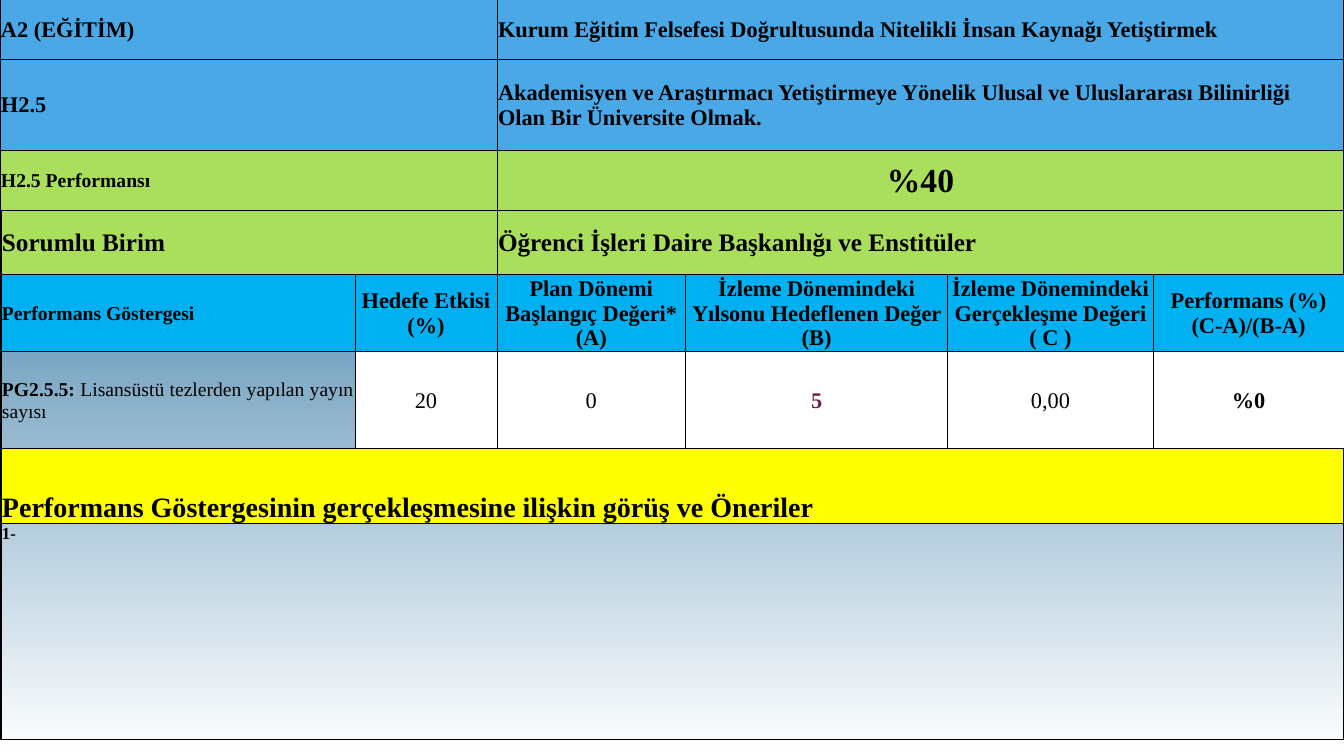
from dataclasses import dataclass

from lxml import etree
from pptx import Presentation
from pptx import util as u
from pptx.dml.color import RGBColor
from pptx.enum import text
from pptx.oxml import ns

PX = 9144  # EMU in one px, 100 px to the inch
FONT = "Times New Roman"
BLACK, WHITE = "000000", "FFFFFF"
BLUE, GREEN, CYAN, YELLOW = "4AA8E7", "AADF5E", "00B0F0", "FFFF00"
PLUM = "701E46"
PLAIN_STYLE = "{2D5ABB26-0587-4C30-8999-92F81FD0307C}"
LEFT, CENTER, JUSTIFY = text.PP_ALIGN.LEFT, text.PP_ALIGN.CENTER, text.PP_ALIGN.JUSTIFY
MIDDLE, TOP, BOTTOM = text.MSO_ANCHOR.MIDDLE, text.MSO_ANCHOR.TOP, text.MSO_ANCHOR.BOTTOM
THIN, THICK = 0.5, 1


@dataclass
class Entry:
    words: str
    size: int = 16
    fill: str = ""
    align: int = LEFT
    span: int = 1
    anchor: int = MIDDLE
    bold: bool = True
    color: str = BLACK
    tail: str = ""  # regular text after the bold start
    open_sides: str = ""  # sides without a border


def px(length):
    return u.Emu(length * PX)


def rgb(code):
    return RGBColor.from_string(code)


def paint_background(page):
    fill = page.background.fill
    fill.gradient()
    fill.gradient_angle = 90
    for stop, color in zip(fill.gradient_stops, (WHITE, "06588E")):
        stop.color.rgb = rgb(color)


def add_border(cell, side, points):
    props = cell._tc.get_or_add_tcPr()
    line = etree.SubElement(props, ns.qn(f"a:ln{side}"), w=str(u.Pt(points)))
    fill = etree.SubElement(line, ns.qn("a:solidFill"))
    etree.SubElement(fill, ns.qn("a:srgbClr"), val=BLACK)


def add_span(para, words, entry, bold):
    span = para.add_run()
    span.text = words
    span.font.name = FONT
    span.font.size = u.Pt(entry.size)
    span.font.bold = bold
    span.font.color.rgb = rgb(entry.color)


def fill_cell(cell, entry, borders):
    for side, points in borders.items():
        if side not in entry.open_sides:
            add_border(cell, side, points)
    if entry.fill:
        cell.fill.solid()
        cell.fill.fore_color.rgb = rgb(entry.fill)
    else:
        cell.fill.background()
    cell.margin_left = cell.margin_right = cell.margin_top = px(1)
    cell.margin_bottom = 0
    cell.vertical_anchor = entry.anchor
    para = cell.text_frame.paragraphs[0]
    para.alignment = entry.align
    if entry.words:
        add_span(para, entry.words, entry, entry.bold)
    if entry.tail:
        add_span(para, entry.tail, entry, False)


def add_grid(page, left, top, widths, heights, rules, rows):
    """rules holds the weights of the horizontal lines, from top to bottom."""
    frame = page.shapes.add_table(len(heights), len(widths), px(left), px(top),
                                  px(sum(widths)), px(sum(heights)))
    table = frame.table
    table.first_row = table.horz_banding = False
    table._tbl.tblPr.find(ns.qn("a:tableStyleId")).text = PLAIN_STYLE
    for column, width in zip(table.columns, widths):
        column.width = px(width)
    for row, height in zip(table.rows, heights):
        row.height = px(height)
    for r, entries in enumerate(rows):
        c = 0
        for entry in entries:
            end = c + entry.span
            cell = table.cell(r, c)
            if entry.span > 1:
                cell.merge(table.cell(r, end - 1))
            borders = {"L": THICK if c == 0 else THIN,
                       "R": THICK if end == len(widths) else THIN,
                       "T": rules[r], "B": rules[r + 1]}
            fill_cell(cell, entry, borders)
            c = end


def main():
    deck = Presentation()
    deck.slide_width, deck.slide_height = px(1333), px(750)
    page = deck.slides.add_slide(deck.slide_layouts[6])
    paint_background(page)

    # Aim, target and target performance
    goals = [
        [Entry("A2 (EĞİTİM)", fill=BLUE, span=2),
         Entry("Kurum Eğitim Felsefesi Doğrultusunda Nitelikli İnsan Kaynağı Yetiştirmek",
               fill=BLUE)],
        [Entry("H2.5", fill=BLUE, align=JUSTIFY, open_sides="R"),
         Entry("", fill=BLUE, open_sides="L"),
         Entry("Akademisyen ve Araştırmacı Yetiştirmeye Yönelik Ulusal ve "
               "Uluslararası Bilinirliği Olan Bir Üniversite Olmak.", fill=BLUE)],
        [Entry("H2.5 Performansı", 14, GREEN, span=2),
         Entry("%40", 24, GREEN, CENTER)],
    ]
    add_grid(page, 0, -1, [362, 131, 840], [60, 90, 60],
             [THICK, THIN, THIN, THIN], goals)

    # Responsible unit, indicator values and remarks
    headings = ["Hedefe Etkisi (%)", "Plan Dönemi Başlangıç Değeri* (A)",
                "İzleme Dönemindeki Yılsonu Hedeflenen Değer (B)",
                "İzleme Dönemindeki Gerçekleşme Değeri ( C )"]
    indicators = [
        [Entry("Sorumlu Birim", 18, GREEN, span=2),
         Entry("Öğrenci İşleri Daire Başkanlığı ve Enstitüler", 18, GREEN, span=4)],
        [Entry("Performans Göstergesi", 14, CYAN, JUSTIFY),
         *[Entry(heading, 16, CYAN, CENTER) for heading in headings],
         Entry("Performans (%) (C-A)/(B-A)", 16, CYAN, CENTER, open_sides="R")],
        [Entry("PG2.5.5: ", 14, align=JUSTIFY,
               tail="Lisansüstü tezlerden yapılan yayın sayısı"),
         Entry("20", 16, WHITE, CENTER, bold=False),
         Entry("0", 16, WHITE, CENTER, bold=False),
         Entry("5", 16, WHITE, CENTER, color=PLUM),
         Entry("0,00", 16, WHITE, CENTER, bold=False),
         Entry("%0", 16, WHITE, CENTER, open_sides="R")],
        [Entry("Performans Göstergesinin gerçekleşmesine ilişkin görüş ve Öneriler",
               20, YELLOW, span=6, anchor=BOTTOM)],
        [Entry("1-", 12, span=6, anchor=TOP)],
    ]
    add_grid(page, 1, 209, [351, 141, 187, 260, 204, 189], [63, 77, 96, 74, 215],
             [THIN, THICK, THIN, THICK, THIN, THIN], indicators)

    deck.save("out.pptx")


if __name__ == "__main__":
    main()
